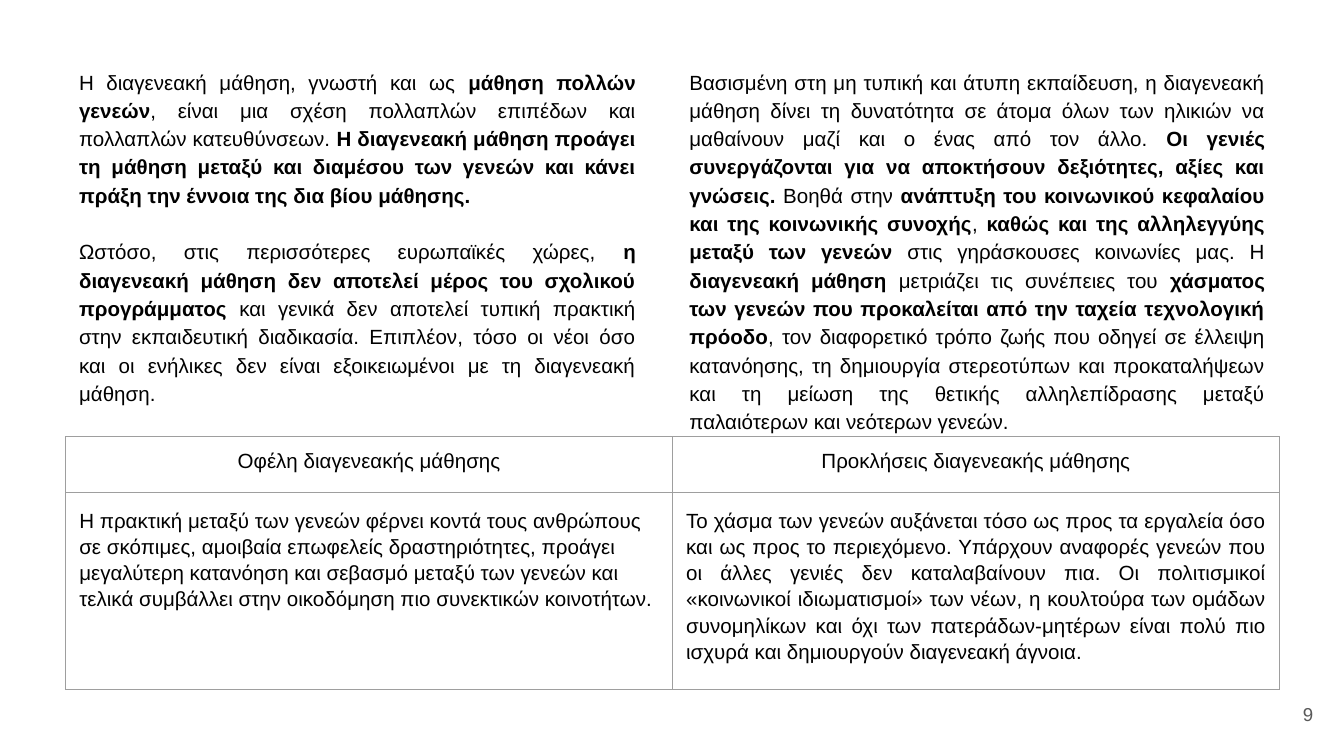
from lxml.etree import SubElement
from pptx import Presentation
from pptx.dml.color import RGBColor
from pptx.enum.text import MSO_ANCHOR, MSO_AUTO_SIZE, PP_ALIGN
from pptx.oxml.ns import qn
from pptx.util import Pt

# Content: each paragraph alternates regular and bold runs
INTRO = [
    ["Η διαγενεακή μάθηση, γνωστή και ως ",
     "μάθηση πολλών γενεών",
     ", είναι μια σχέση πολλαπλών επιπέδων και πολλαπλών κατευθύνσεων. ",
     "Η διαγενεακή μάθηση προάγει τη μάθηση μεταξύ και διαμέσου των γενεών "
     "και κάνει πράξη την έννοια της δια βίου μάθησης."],
    ["Ωστόσο, στις περισσότερες ευρωπαϊκές χώρες, ",
     "η διαγενεακή μάθηση δεν αποτελεί μέρος του σχολικού προγράμματος ",
     "και γενικά δεν αποτελεί τυπική πρακτική στην εκπαιδευτική διαδικασία. "
     "Επιπλέον, τόσο οι νέοι όσο και οι ενήλικες δεν είναι εξοικειωμένοι με "
     "τη διαγενεακή μάθηση."],
]
EFFECTS = [
    ["Βασισμένη στη μη τυπική και άτυπη εκπαίδευση, η διαγενεακή μάθηση δίνει "
     "τη δυνατότητα σε άτομα όλων των ηλικιών να μαθαίνουν μαζί και ο ένας "
     "από τον άλλο. ",
     "Οι γενιές συνεργάζονται για να αποκτήσουν δεξιότητες, αξίες και γνώσεις.",
     " Βοηθά στην ",
     "ανάπτυξη του κοινωνικού κεφαλαίου και της κοινωνικής συνοχής",
     ", ",
     "καθώς και της αλληλεγγύης μεταξύ των γενεών",
     " στις γηράσκουσες κοινωνίες μας. Η ",
     "διαγενεακή μάθηση",
     " μετριάζει τις συνέπειες του ",
     "χάσματος των γενεών που προκαλείται από την ταχεία τεχνολογική πρόοδο",
     ", τον διαφορετικό τρόπο ζωής που οδηγεί σε έλλειψη κατανόησης, τη "
     "δημιουργία στερεοτύπων και προκαταλήψεων και τη μείωση της θετικής "
     "αλληλεπίδρασης μεταξύ παλαιότερων και νεότερων γενεών."],
]
HEADERS = ["Οφέλη διαγενεακής μάθησης", "Προκλήσεις διαγενεακής μάθησης"]
BENEFITS = (
    "Η πρακτική μεταξύ των γενεών φέρνει κοντά τους ανθρώπους σε σκόπιμες, "
    "αμοιβαία επωφελείς δραστηριότητες, προάγει μεγαλύτερη κατανόηση και "
    "σεβασμό μεταξύ των γενεών και τελικά συμβάλλει στην οικοδόμηση πιο "
    "συνεκτικών κοινοτήτων.")
CHALLENGES = (
    "Το χάσμα των γενεών αυξάνεται τόσο ως προς τα εργαλεία όσο και ως προς το "
    "περιεχόμενο. Υπάρχουν αναφορές γενεών που οι άλλες γενιές δεν "
    "καταλαβαίνουν πια. Οι πολιτισμικοί «κοινωνικοί ιδιωματισμοί» των νέων, η "
    "κουλτούρα των ομάδων συνομηλίκων και όχι των πατεράδων-μητέρων είναι πολύ "
    "πιο ισχυρά και δημιουργούν διαγενεακή άγνοια.")
PAGE = "9"

THEME = {
    "font": "Arial", "body": 11, "page": 10,
    "text": "000000", "muted": "595959", "border": "9E9E9E",
    "border_width": 0.75, "inset": 7.2, "spacing": 1.15, "gap": 15.2,
}
LEFT, TOP = 35.3, 28.1
TABLE_TOP, TABLE_WIDTH, ROWS = 234, 650.2, [30, 105.4]
LEFT_, CENTER, RIGHT, JUSTIFY = (
    PP_ALIGN.LEFT, PP_ALIGN.CENTER, PP_ALIGN.RIGHT, PP_ALIGN.JUSTIFY)


def write(tf, paragraphs, align, spacing=None, size="body", color="text"):
    for i, runs in enumerate(paragraphs):
        p = tf.paragraphs[0] if i == 0 else tf.add_paragraph()
        p.alignment = align
        if spacing:
            p.line_spacing = spacing
        if i:
            p.space_before = Pt(THEME["gap"])
        for j, text in enumerate(runs):
            r = p.add_run()
            r.text = text
            r.font.name = THEME["font"]
            r.font.size = Pt(THEME[size])
            r.font.bold = j % 2 == 1
            r.font.color.rgb = RGBColor.from_string(THEME[color])


def set_margins(obj):
    for side in ("left", "right", "top", "bottom"):
        setattr(obj, f"margin_{side}", Pt(THEME["inset"]))


def add_text(s, box, *args, **style):
    tf = s.shapes.add_textbox(*map(Pt, box)).text_frame
    tf.word_wrap = True
    set_margins(tf)
    write(tf, *args, **style)
    return tf


def style_cell(cell):
    set_margins(cell)
    tc_pr = cell._tc.get_or_add_tcPr()
    for side in ("lnL", "lnR", "lnT", "lnB"):
        ln = SubElement(tc_pr, qn(f"a:{side}"), w=str(Pt(THEME["border_width"])))
        fill = SubElement(ln, qn("a:solidFill"))
        SubElement(fill, qn("a:srgbClr"), val=THEME["border"])
    cell.fill.background()


prs = Presentation()
prs.slide_width, prs.slide_height = Pt(720), Pt(405)
s = prs.slides.add_slide(prs.slide_layouts[6])

# Two text columns
for box, paragraphs in [((362.2, TOP, 322.6, 227.5), EFFECTS),
                        ((LEFT, TOP, 312.5, 198.7), INTRO)]:
    tf = add_text(s, box, paragraphs, JUSTIFY, THEME["spacing"])
    tf.auto_size = MSO_AUTO_SIZE.SHAPE_TO_FIT_TEXT

# Page number
tf = add_text(s, (667.4, 367.2, 43.2, 31), [[PAGE]], RIGHT,
              size="page", color="muted")
tf.vertical_anchor = MSO_ANCHOR.MIDDLE

# Benefits and challenges table
table = s.shapes.add_table(2, 2, Pt(LEFT), Pt(TABLE_TOP),
                           Pt(TABLE_WIDTH), Pt(sum(ROWS))).table
table.first_row = table.horz_banding = False
for row, height in zip(table.rows, ROWS):
    row.height = Pt(height)
for c, (header, body, align) in enumerate(
        zip(HEADERS, (BENEFITS, CHALLENGES), (LEFT_, JUSTIFY))):
    table.columns[c].width = Pt(TABLE_WIDTH / 2)
    write(table.cell(0, c).text_frame, [[header]], CENTER)
    write(table.cell(1, c).text_frame, [[body]], align, THEME["spacing"])
for cell in table.iter_cells():
    style_cell(cell)

prs.save("out.pptx")
